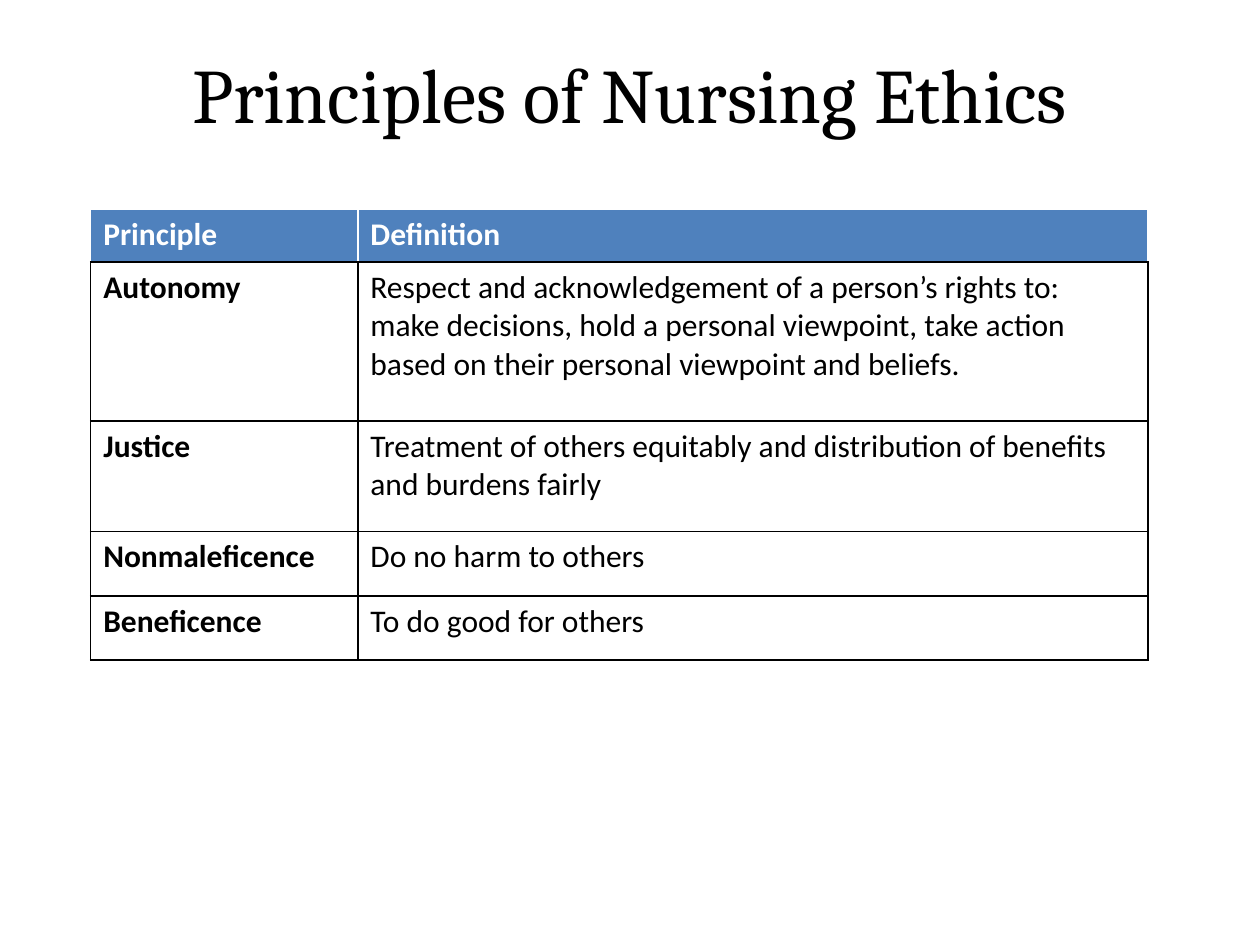
from lxml import etree
from pptx import Presentation
from pptx import util as u
from pptx.dml.color import RGBColor
from pptx.enum import text
from pptx.oxml import ns

BLACK = RGBColor(0x00, 0x00, 0x00)
WHITE = RGBColor(0xFF, 0xFF, 0xFF)
BLUE = RGBColor(0x4F, 0x81, 0xBD)

COLUMN_WIDTHS = [2.12, 6.27]
ROW_HEIGHTS = [0.42, 1.26, 0.88, 0.51, 0.51]
ROWS = [
    ("Principle", "Definition"),
    ("Autonomy",
     "Respect and acknowledgement of a person’s rights to:\n"
     "make decisions, hold a personal viewpoint, take action "
     "based on their personal viewpoint and beliefs."),
    ("Justice",
     "Treatment of others equitably and distribution of benefits "
     "and burdens fairly"),
    ("Nonmaleficence", "Do no harm to others"),
    ("Beneficence", "To do good for others"),
]


def set_title(slide, wording):
    title = slide.shapes.title
    title.left, title.top = u.Inches(0.5), u.Inches(0.11)
    title.width, title.height = u.Inches(9), u.Inches(1.25)
    frame = title.text_frame
    frame.text = wording
    frame.vertical_anchor = text.MSO_ANCHOR.MIDDLE
    paragraph = frame.paragraphs[0]
    paragraph.alignment = text.PP_ALIGN.CENTER
    paragraph.font.name = "Cambria"
    paragraph.font.size = u.Pt(44)
    paragraph.font.color.rgb = BLACK


def set_borders(cell, colors):
    """Draw 1 pt borders; colors are in the order left, right, top, bottom."""
    properties = cell._tc.get_or_add_tcPr()
    for side, color in zip("LRTB", colors):
        line = etree.SubElement(properties, ns.qn(f"a:ln{side}"), w=str(u.Pt(1)))
        fill = etree.SubElement(line, ns.qn("a:solidFill"))
        etree.SubElement(fill, ns.qn("a:srgbClr"), val=str(color))


def format_cell(cell, wording, is_header, is_bold):
    # Borders come before the fill in the cell properties
    edge = WHITE if is_header else BLACK
    set_borders(cell, [edge, edge, edge, BLACK])
    cell.fill.solid()
    cell.fill.fore_color.rgb = BLUE if is_header else WHITE
    cell.text = wording
    for paragraph in cell.text_frame.paragraphs:
        paragraph.font.name = "Calibri"
        paragraph.font.size = u.Pt(18)
        paragraph.font.bold = is_bold
        paragraph.font.color.rgb = WHITE if is_header else BLACK


def add_principles_table(slide):
    table = slide.shapes.add_table(
        len(ROWS), len(COLUMN_WIDTHS), u.Inches(0.72), u.Inches(1.66),
        u.Inches(sum(COLUMN_WIDTHS)), u.Inches(sum(ROW_HEIGHTS))).table
    table.horz_banding = False
    for column, width in zip(table.columns, COLUMN_WIDTHS):
        column.width = u.Inches(width)
    for row, height in zip(table.rows, ROW_HEIGHTS):
        row.height = u.Inches(height)
    for row_index, row in enumerate(ROWS):
        for column_index, wording in enumerate(row):
            is_header = row_index == 0
            format_cell(table.cell(row_index, column_index), wording,
                        is_header, is_header or column_index == 0)


def main():
    presentation = Presentation()
    presentation.slide_width = u.Inches(10)
    presentation.slide_height = u.Inches(7.5)
    # Title-only layout
    slide = presentation.slides.add_slide(presentation.slide_layouts[5])
    set_title(slide, "Principles of Nursing Ethics")
    add_principles_table(slide)
    presentation.save("out.pptx")


if __name__ == "__main__":
    main()
